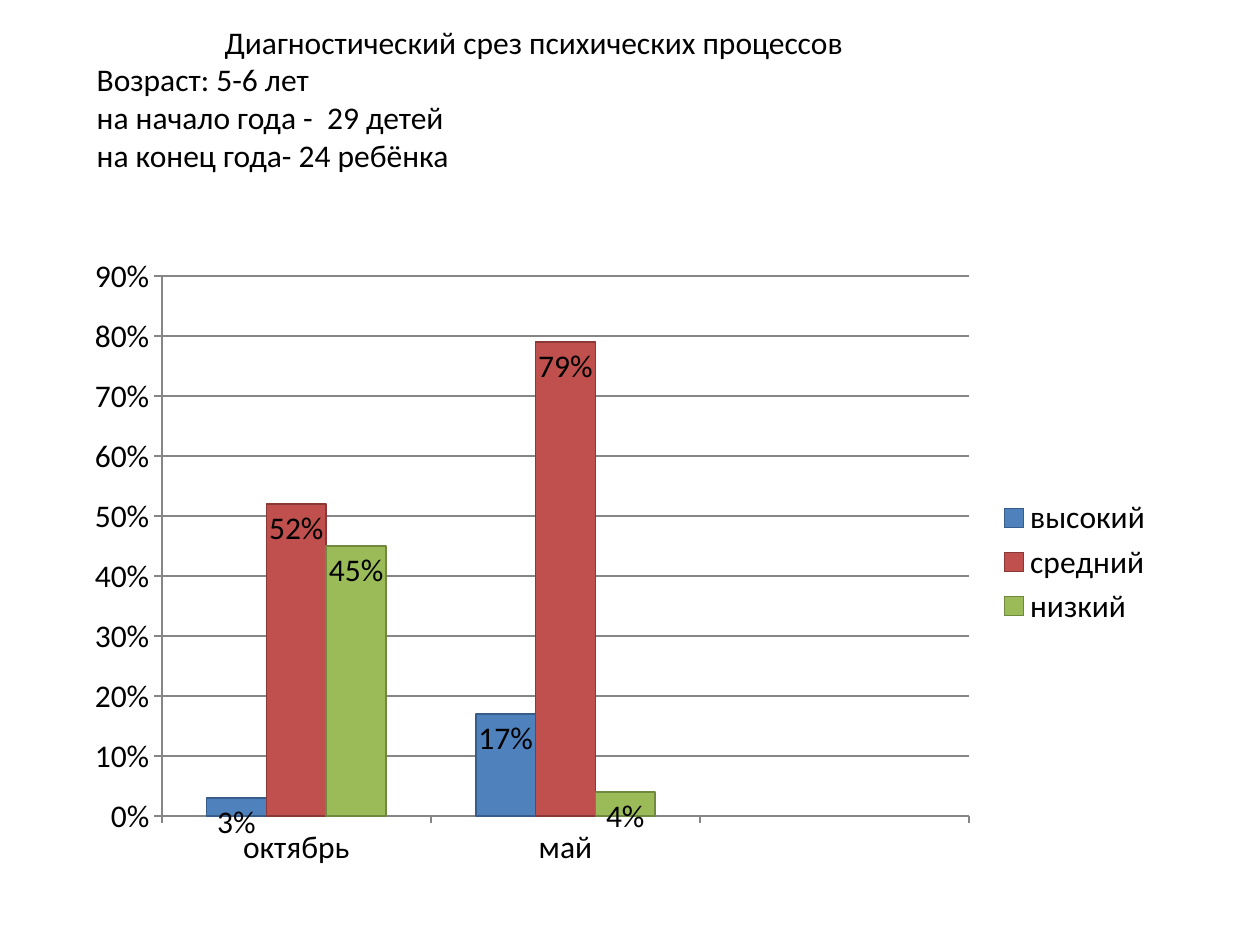
from dataclasses import dataclass

from lxml import etree
from pptx import Presentation
from pptx import util as u
from pptx.chart.data import CategoryChartData
from pptx.dml.color import RGBColor
from pptx.enum import chart as ch, text

HEADING = [
    "Диагностический срез психических процессов",
    "Возраст: 5-6 лет",
    "на начало года -  29 детей",
    "на конец года- 24 ребёнка",
]
MONTHS = ["октябрь", "май", ""]
LEVELS = [
    ("высокий", (0.03, 0.17, None), "4F81BD", "385D8A"),
    ("средний", (0.52, 0.79, None), "C0504D", "8C3836"),
    ("низкий", (0.45, 0.04, None), "9BBB59", "71893F"),
]
HEADING_BOX = (1.7, 0.33, 21.59, 3.99)
DIAGRAM_BOX = (1.5, 4.93, 22, 12.8)
HEADING_INDENT = u.Cm(2.58)
PLOT_AREA = {"x": 0.08, "y": 0.05, "w": 0.74, "h": 0.85}


@dataclass(frozen=True)
class Theme:
    font: str = "Calibri"
    size: int = 18
    ink: str = "000000"
    grid: str = "868686"
    line: float = 1


THEME = Theme()


def apply(target, values):
    for name, value in values.items():
        setattr(target, name, value)


def style_font(font):
    apply(font, {"name": THEME.font, "size": u.Pt(THEME.size), "bold": False})
    font.color.rgb = RGBColor.from_string(THEME.ink)


def style_line(line, color):
    line.width = u.Pt(THEME.line)
    line.color.rgb = RGBColor.from_string(color)


def add_heading(slide):
    frame = slide.shapes.add_textbox(*map(u.Cm, HEADING_BOX)).text_frame
    apply(frame, {"word_wrap": True, "vertical_anchor": text.MSO_ANCHOR.TOP})
    paragraph = frame.paragraphs[0]
    paragraph.alignment = text.PP_ALIGN.LEFT
    paragraph._p.get_or_add_pPr().set("indent", str(HEADING_INDENT))
    for number, words in enumerate(HEADING):
        if number:
            paragraph.add_line_break()
        run = paragraph.add_run()
        run.text = words
        style_font(run.font)


def place_plot(diagram):
    area = diagram._chartSpace.chart.plotArea
    for old in area.findall("{*}layout"):
        area.remove(old)
    space = "{%s}" % area.nsmap["c"]
    layout = etree.Element(space + "layout")
    manual = etree.SubElement(layout, space + "manualLayout")
    rules = {"layoutTarget": "inner", "xMode": "edge", "yMode": "edge", **PLOT_AREA}
    for tag, value in rules.items():
        etree.SubElement(manual, space + tag).set("val", str(value))
    area.insert(0, layout)


def add_diagram(slide):
    data = CategoryChartData(number_format="0%")
    data.categories = MONTHS
    for name, shares, _, _ in LEVELS:
        data.add_series(name, shares)
    diagram = slide.shapes.add_chart(
        ch.XL_CHART_TYPE.COLUMN_CLUSTERED, *map(u.Cm, DIAGRAM_BOX), data
    ).chart
    apply(diagram, {"has_title": False, "has_legend": True})
    style_font(diagram.font)
    apply(diagram.legend, {
        "position": ch.XL_LEGEND_POSITION.RIGHT, "include_in_layout": False,
    })
    place_plot(diagram)

    shares_axis = diagram.value_axis
    apply(shares_axis, {
        "minimum_scale": 0, "maximum_scale": 0.9, "major_unit": 0.1,
        "has_major_gridlines": True,
    })
    apply(shares_axis.tick_labels, {
        "number_format": "0%", "number_format_is_linked": False,
    })
    style_line(shares_axis.major_gridlines.format.line, THEME.grid)
    for axis in (diagram.category_axis, shares_axis):
        axis.major_tick_mark = ch.XL_TICK_MARK.OUTSIDE
        style_line(axis.format.line, THEME.grid)

    plot = diagram.plots[0]
    apply(plot, {"gap_width": 150, "overlap": 0, "vary_by_categories": False})
    for series, (_, _, fill, edge) in zip(plot.series, LEVELS):
        series.format.fill.solid()
        series.format.fill.fore_color.rgb = RGBColor.from_string(fill)
        style_line(series.format.line, edge)
        labels = series.data_labels
        apply(labels, {
            "show_value": True, "position": ch.XL_LABEL_POSITION.INSIDE_END,
            "number_format": "0%", "number_format_is_linked": False,
        })
        style_font(labels.font)


def main():
    deck = Presentation()
    apply(deck, {"slide_width": u.Cm(25.4), "slide_height": u.Cm(19.05)})
    slide = deck.slides.add_slide(deck.slide_layouts[6])
    add_heading(slide)
    add_diagram(slide)
    deck.save("out.pptx")


if __name__ == "__main__":
    main()
